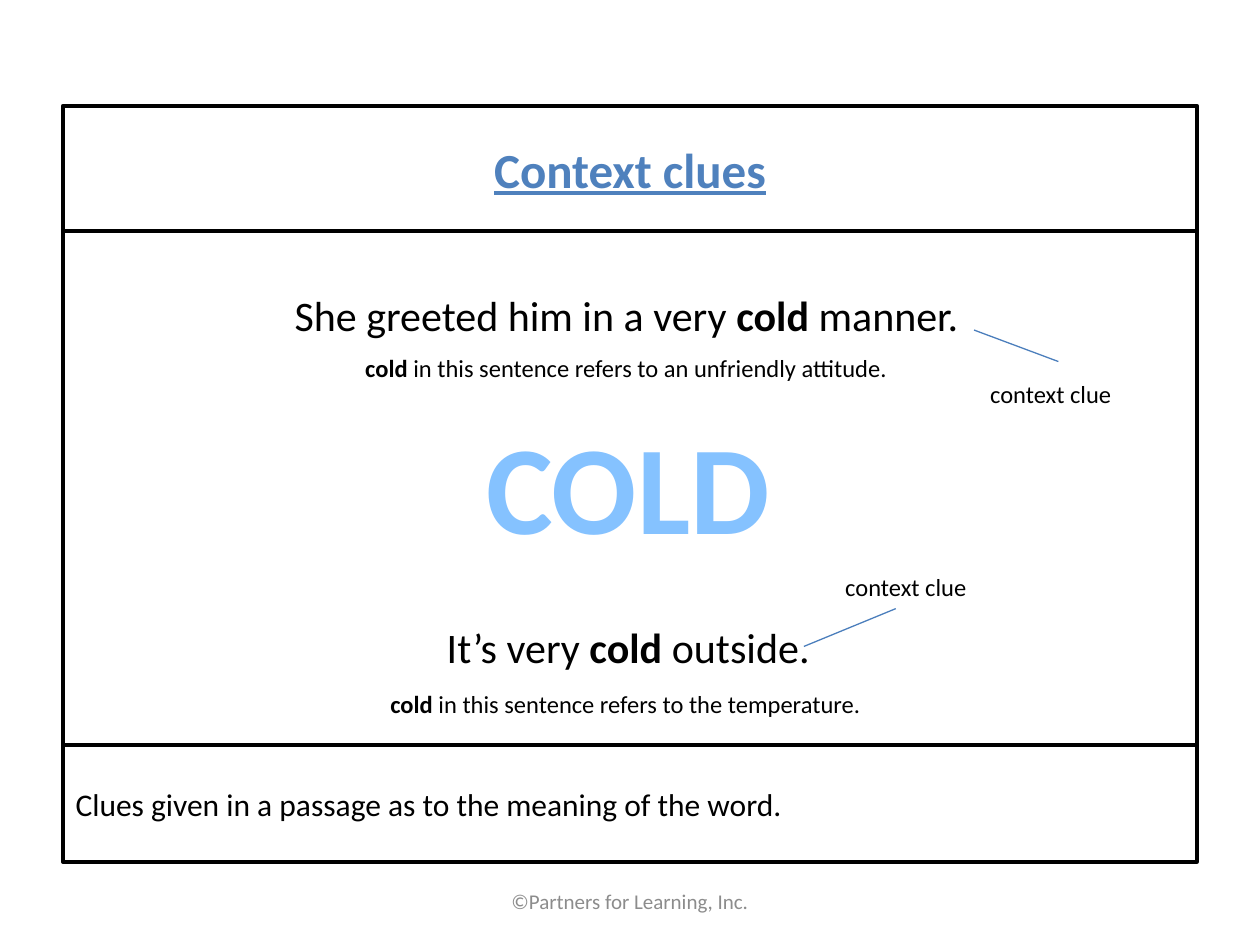
"""Build a vocabulary slide on context clues for the word cold."""
from lxml import etree
from pptx import Presentation
from pptx.dml.color import RGBColor
from pptx.enum import shapes, text
from pptx.oxml import ns
from pptx.util import Pt


class theme:
    font = "Calibri"
    black = RGBColor.from_string("000000")
    title = RGBColor.from_string("4F81BD")
    footer = RGBColor.from_string("8C8C8C")
    pointer = RGBColor.from_string("4B7EBC")
    word_outline = "1E7CEE"
    word_stops = ((0, "5E9EFF"), (40, "85C2FF"), (70, "C4D6EB"), (100, "FFEBFA"))
    word_size, title_size, sentence_size = 72, 28, 24
    definition_size, note_size, footer_size = 18, 14, 12


def place(shape, left, top, width, height):
    shape.left, shape.top, shape.width, shape.height = map(Pt, (left, top, width, height))


def write(shape, parts, size, color, bold_part=None):
    paragraph = shape.text_frame.paragraphs[0]
    for part in parts:
        run = paragraph.add_run()
        run.text = part
        run.font.name, run.font.size = theme.font, Pt(size)
        run.font.bold = part == bold_part
        run.font.color.rgb = color
    return paragraph


presentation = Presentation()
presentation.slide_width, presentation.slide_height = Pt(720), Pt(540)
slide = presentation.slides.add_slide(presentation.slide_layouts[1])
title, definition = slide.placeholders

left, width = 36, 648
rows = ((60.5, 71.5), (132, 294), (426, 66.5))
for top, height in rows:
    frame = slide.shapes.add_shape(shapes.MSO_SHAPE.RECTANGLE, Pt(left), Pt(top), Pt(width), Pt(height))
    frame.shadow.inherit = False
    frame.fill.background()
    frame.line.color.rgb, frame.line.width = theme.black, Pt(2.25)

for placeholder, (top, height) in ((title, rows[0]), (definition, rows[2])):
    place(placeholder, left, top, width, height)
    placeholder.text_frame.auto_size = text.MSO_AUTO_SIZE.NONE
    placeholder.text_frame.vertical_anchor = text.MSO_ANCHOR.MIDDLE

heading = write(title, ["Context clues"], theme.title_size, theme.title, "Context clues")
heading.alignment = text.PP_ALIGN.CENTER
heading.runs[0].font.underline = True

meaning = write(definition, ["Clues given in a passage as to the meaning of the word."],
                theme.definition_size, theme.black)
meaning.space_before = Pt(0)
properties = meaning._p.get_or_add_pPr()
properties.set("marL", "0")
properties.set("indent", "0")
etree.SubElement(properties, ns.qn("a:buNone"))

footer = slide.shapes.add_textbox(Pt(246), Pt(500.5), Pt(228), Pt(28.75))
footer.text_frame.word_wrap = True
footer.text_frame.vertical_anchor = text.MSO_ANCHOR.MIDDLE
write(footer, ["©Partners for Learning, Inc."], theme.footer_size,
      theme.footer).alignment = text.PP_ALIGN.CENTER

labels = (
    ((270.7, 229.7, 178.6, 94.3), ["COLD"], theme.word_size),
    ((248.2, 351.4, 223.6, 36), ["It’s very ", "cold", " outside."], theme.sentence_size),
    ((161.3, 162, 397.4, 36), ["She greeted him in a very ", "cold", " manner."], theme.sentence_size),
    ((216, 390.2, 285.1, 24.5), ["cold", " in this sentence refers to the temperature."], theme.note_size),
    ((201.6, 198, 316.1, 24.5), ["cold", " in this sentence refers to an unfriendly attitude."], theme.note_size),
    ((558.7, 213.1, 84.2, 24.5), ["context clue"], theme.note_size),
    ((475.9, 323.3, 84.2, 24.5), ["context clue"], theme.note_size),
)
for box, parts, size in labels:
    label = slide.shapes.add_textbox(*map(Pt, box))
    label.text_frame.word_wrap = False
    label.text_frame.auto_size = text.MSO_AUTO_SIZE.SHAPE_TO_FIT_TEXT
    paragraph = write(label, parts, size, theme.black, "COLD" if parts == ["COLD"] else "cold")
    if parts == ["COLD"]:
        word_font = paragraph.runs[0].font

word_font.fill.background()
word_properties = word_font._element if hasattr(word_font, "_element") else word_font._rPr
word_properties.remove(word_properties.find(ns.qn("a:noFill")))
stops = "".join(f'<a:gs pos="{position * 1000}"><a:srgbClr val="{color}"/></a:gs>'
                for position, color in theme.word_stops)
namespace = ns.nsdecls("a")
outline = (f'<a:ln {namespace} w="889"><a:solidFill><a:srgbClr val="{theme.word_outline}">'
           '<a:alpha val="55000"/></a:srgbClr></a:solidFill></a:ln>')
gradient = (f'<a:gradFill {namespace}><a:gsLst>{stops}</a:gsLst>'
            '<a:lin ang="5400000" scaled="0"/></a:gradFill>')
for position, markup in enumerate((outline, gradient)):
    word_properties.insert(position, etree.fromstring(markup))

for ends in ((604.8, 206.6, 556.6, 188.6), (459.4, 369.4, 511.9, 347.8)):
    pointer = slide.shapes.add_connector(shapes.MSO_CONNECTOR.STRAIGHT, *map(Pt, ends))
    pointer.line.color.rgb, pointer.line.width = theme.pointer, Pt(0.75)
    etree.SubElement(pointer._element.spPr, ns.qn("a:effectLst"))

presentation.save("out.pptx")
